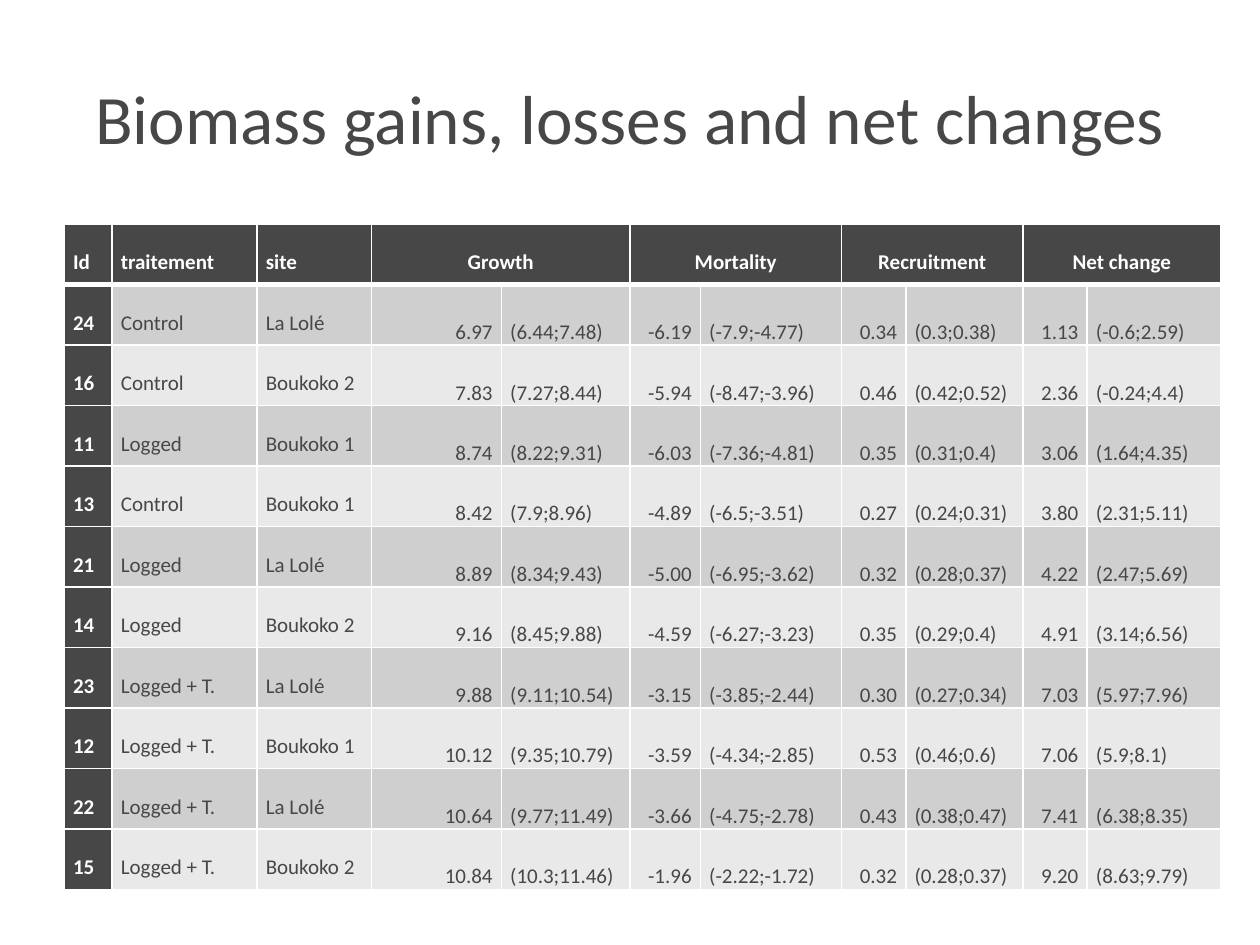
from lxml import etree
from pptx import Presentation
from pptx import util as u
from pptx.dml.color import RGBColor
from pptx.enum import text
from pptx.oxml.ns import qn

DARK, WHITE = "474747", "FFFFFF"
BANDS = ("CFCFCF", "E9E9E9")
FONT = "Calibri"
WIDTHS = (0.38, 1.15, 0.91, 1.03, 1.02, 0.56, 1.12, 0.51, 0.93, 0.51, 1.06)
ROW = 0.48
LABELS = 3
HEADS = ("Id", "traitement", "site")
GROUPS = ("Growth", "Mortality", "Recruitment", "Net change")
PLOTS = (
    "24|Control|La Lolé|6.97|(6.44;7.48)|-6.19|(-7.9;-4.77)|0.34|(0.3;0.38)|1.13|(-0.6;2.59)",
    "16|Control|Boukoko 2|7.83|(7.27;8.44)|-5.94|(-8.47;-3.96)|0.46|(0.42;0.52)|2.36|(-0.24;4.4)",
    "11|Logged|Boukoko 1|8.74|(8.22;9.31)|-6.03|(-7.36;-4.81)|0.35|(0.31;0.4)|3.06|(1.64;4.35)",
    "13|Control|Boukoko 1|8.42|(7.9;8.96)|-4.89|(-6.5;-3.51)|0.27|(0.24;0.31)|3.80|(2.31;5.11)",
    "21|Logged|La Lolé|8.89|(8.34;9.43)|-5.00|(-6.95;-3.62)|0.32|(0.28;0.37)|4.22|(2.47;5.69)",
    "14|Logged|Boukoko 2|9.16|(8.45;9.88)|-4.59|(-6.27;-3.23)|0.35|(0.29;0.4)|4.91|(3.14;6.56)",
    "23|Logged + T.|La Lolé|9.88|(9.11;10.54)|-3.15|(-3.85;-2.44)|0.30|(0.27;0.34)|7.03|(5.97;7.96)",
    "12|Logged + T.|Boukoko 1|10.12|(9.35;10.79)|-3.59|(-4.34;-2.85)|0.53|(0.46;0.6)|7.06|(5.9;8.1)",
    "22|Logged + T.|La Lolé|10.64|(9.77;11.49)|-3.66|(-4.75;-2.78)|0.43|(0.38;0.47)|7.41|(6.38;8.35)",
    "15|Logged + T.|Boukoko 2|10.84|(10.3;11.46)|-1.96|(-2.22;-1.72)|0.32|(0.28;0.37)|9.20|(8.63;9.79)",
)


def tint(color, value):
    color.rgb = RGBColor.from_string(value)


def style(para, size, color, align, bold=False):
    para.alignment = align
    for run in para.runs:
        run.font.name, run.font.size, run.font.bold = FONT, u.Pt(size), bold
        tint(run.font.color, color)


def edge(cell, top, base):
    """Draw white borders, with top and bottom widths in points."""
    props = cell._tc.get_or_add_tcPr()
    for side, width in (("L", 1), ("R", 1), ("T", top), ("B", base)):
        line = etree.SubElement(props, qn("a:ln" + side), w=str(u.Pt(width)))
        fill = etree.SubElement(line, qn("a:solidFill"))
        etree.SubElement(fill, qn("a:srgbClr"), val=WHITE)


def fill_cell(cell, words, row, col):
    head, value = row == 0, row > 0 and col >= LABELS
    edge(cell, 3 if row == 1 else 1, 3 if head else 1)
    strong = head or col == 0
    cell.fill.solid()
    tint(cell.fill.fore_color, DARK if strong else BANDS[(row - 1) % 2])
    cell.margin_left = cell.margin_right = u.Inches(0.07)
    cell.margin_top = cell.margin_bottom = 0
    cell.vertical_anchor = text.MSO_ANCHOR.BOTTOM if value else text.MSO_ANCHOR.TOP
    align = text.PP_ALIGN.LEFT
    if col >= LABELS:
        pair = (text.PP_ALIGN.RIGHT, text.PP_ALIGN.JUSTIFY)
        align = text.PP_ALIGN.CENTER if head else pair[(col - LABELS) % 2]
    cell.text_frame.text = words
    para = cell.text_frame.paragraphs[0]
    para.line_spacing = 2.0
    style(para, 12, WHITE if strong else DARK, align, strong)


def add_title(slide, words):
    title = slide.shapes.title
    title.left, title.top = u.Inches(0.5), u.Inches(0.3)
    title.width, title.height = u.Inches(9), u.Inches(1.25)
    frame = title.text_frame
    frame.text = words
    frame.vertical_anchor = text.MSO_ANCHOR.MIDDLE
    style(frame.paragraphs[0], 39.6, DARK, text.PP_ALIGN.CENTER)


def add_grid(slide):
    top = list(HEADS)
    for group in GROUPS:
        top += [group, ""]
    rows = [top] + [plot.split("|") for plot in PLOTS]
    frame = slide.shapes.add_table(
        len(rows), len(WIDTHS), u.Inches(0.51), u.Inches(1.78),
        u.Inches(sum(WIDTHS)), u.Inches(ROW * len(rows)))
    table = frame.table
    table.first_col = True
    for column, width in zip(table.columns, WIDTHS):
        column.width = u.Inches(width)
    for r, row in enumerate(rows):
        table.rows[r].height = u.Inches(ROW)
        for c, words in enumerate(row):
            fill_cell(table.cell(r, c), words, r, c)
    for c in range(LABELS, len(WIDTHS), 2):
        table.cell(0, c).merge(table.cell(0, c + 1))


def main():
    deck = Presentation()
    deck.slide_width, deck.slide_height = u.Inches(10), u.Inches(7.5)
    slide = deck.slides.add_slide(deck.slide_layouts[5])
    add_title(slide, "Biomass gains, losses and net changes")
    add_grid(slide)
    deck.save("out.pptx")


if __name__ == "__main__":
    main()
